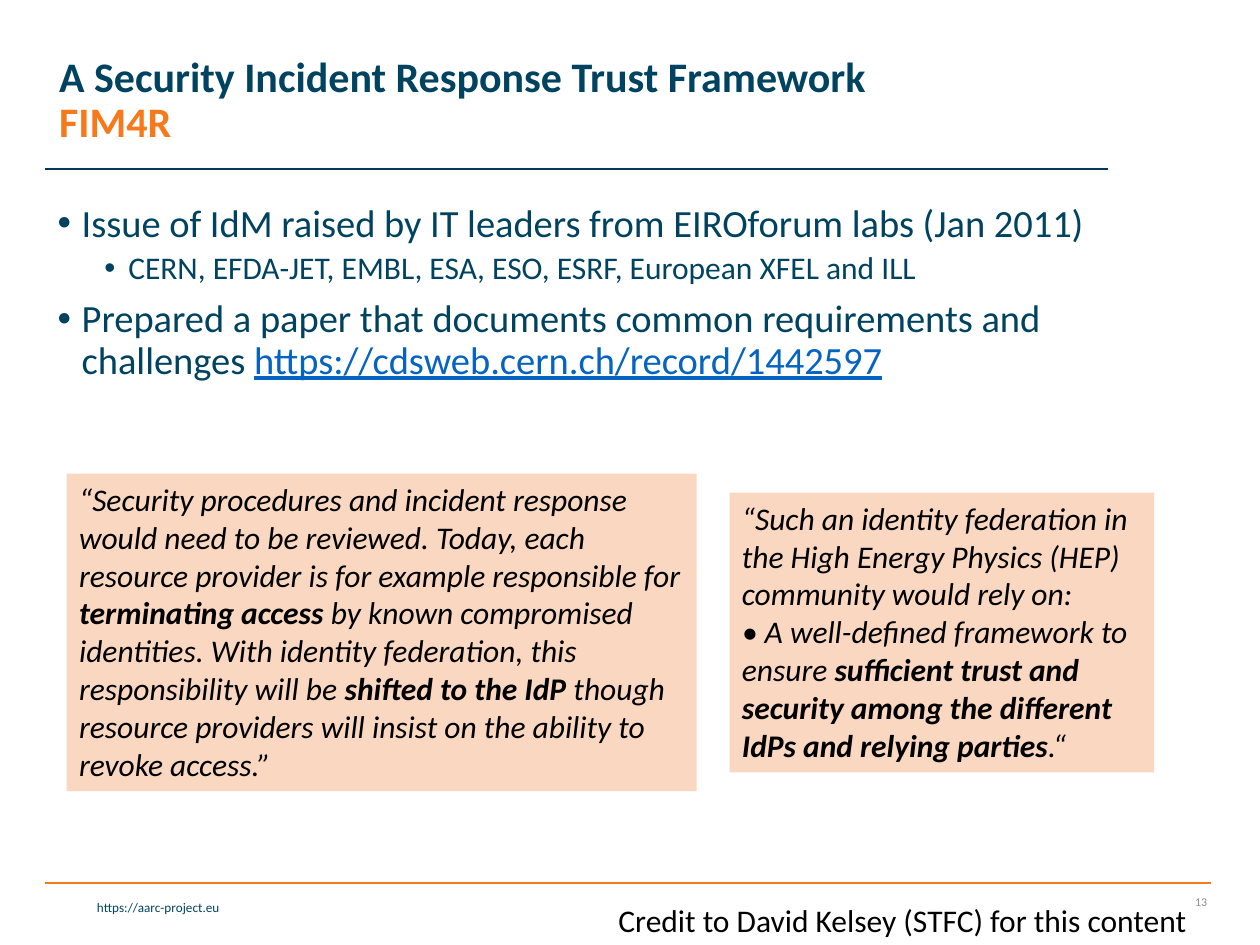
import pptx
import pptx.util
import pptx.dml.color
import pptx.enum.shapes
import pptx.enum.text
import lxml.etree
from pptx.oxml.ns import qn

Inches, Pt = pptx.util.Inches, pptx.util.Pt
RGB = pptx.dml.color.RGBColor
ALIGN = pptx.enum.text.PP_ALIGN
MIDDLE = pptx.enum.text.MSO_ANCHOR.MIDDLE

FONT = "Calibri"
TEAL = RGB(0x00, 0x43, 0x60)
NAVY = RGB(0x00, 0x39, 0x59)
ORANGE = RGB(0xF6, 0x79, 0x1C)
PEACH = RGB(0xED, 0x7D, 0x31)
BLUE = RGB(0x05, 0x63, 0xC1)
GREY = RGB(0x8C, 0x8C, 0x8C)
BLACK = RGB(0, 0, 0)

TITLE = ("A Security Incident Response Trust Framework ", "FIM4R")

# Level, then (text, is it an address) runs
POINTS = [
    (0, [("Issue of IdM raised by IT leaders from EIROforum labs (Jan 2011)", False)]),
    (1, [("CERN, EFDA-JET, EMBL, ESA, ESO, ESRF, European XFEL and ILL", False)]),
    (0, [("Prepared a paper that documents common requirements and challenges ", False),
         ("https://cdsweb.cern.ch/record/1442597", True)]),
]
# Size, space before and left indent of each level
LEVELS = [(22, 7.5, 0.19), (18, 3.8, 0.56)]
HANG = 0.19

# Box, then paragraphs of (text, bold) runs
QUOTES = [
    ((5.79, 3.91, 3.37, 2.22), [
        [("“Such an identity federation in the High Energy Physics (HEP) "
          "community would rely on:", False)],
        [("• A well-defined framework to ensure ", False),
         ("sufficient trust and security among the different IdPs "
          "and relying parties", True),
         (".“", False)],
    ]),
    ((0.53, 3.76, 5, 2.52), [
        [("“Security procedures and incident response would need to be reviewed. "
          "Today, each resource provider is for example responsible for ", False),
         ("terminating access", True),
         (" by known compromised identities. With identity federation, "
          "this responsibility will be ", False),
         ("shifted to the IdP", True),
         (" though resource providers will insist on the ability "
          "to revoke access.”", False)],
    ]),
]

# Text, box, size, colour, alignment, wrap, anchor
LABELS = [
    ("https://aarc-project.eu", (0.35, 7.09, 1.49, 0.23), 7.5, TEAL, ALIGN.RIGHT, True, None),
    ("13", (9.07, 7.01, 0.61, 0.3), 6.8, GREY, ALIGN.RIGHT, True, MIDDLE),
    ("Credit to David Kelsey (STFC) for this content", (4.81, 7.1, 4.79, 0.4),
     18, BLACK, ALIGN.LEFT, False, None),
]

# Left, right, height on the slide, colour
RULES = [(0.36, 9.61, 7.01, ORANGE), (0.36, 8.79, 1.34, NAVY)]


def style(para, size, color):
    para.font.name = FONT
    para.font.size = Pt(size)
    para.font.color.rgb = color


def add_rule(slide, left, right, top, color):
    line = slide.shapes.add_connector(
        pptx.enum.shapes.MSO_CONNECTOR.STRAIGHT, *map(Inches, (left, top, right, top)))
    line.line.color.rgb = color
    line.line.width = Pt(1)
    lxml.etree.SubElement(line._element.spPr, qn("a:effectLst"))


def add_label(slide, text, box, size, color, align, wrap, anchor):
    frame = slide.shapes.add_textbox(*map(Inches, box)).text_frame
    frame.word_wrap = wrap
    if anchor is not None:
        frame.vertical_anchor = anchor
    para = frame.paragraphs[0]
    para.text = text
    para.alignment = align
    style(para, size, color)


def set_title(slide):
    title = slide.shapes.title
    title.left, title.top, title.width, title.height = map(Inches, (0.37, 0.08, 7.88, 1.45))
    frame = title.text_frame
    frame.vertical_anchor = MIDDLE
    para = frame.paragraphs[0]
    para.alignment = ALIGN.LEFT
    para.line_spacing = 0.9
    style(para, 24, TEAL)
    para.font.bold = True
    para.add_run().text = TITLE[0]
    para.add_line_break()
    run = para.add_run()
    run.text = TITLE[1]
    run.font.color.rgb = ORANGE


def add_points(slide):
    frame = slide.shapes.add_textbox(*map(Inches, (0.36, 1.57, 8.95, 5.18))).text_frame
    frame.word_wrap = True
    for i, (level, runs) in enumerate(POINTS):
        size, space, indent = LEVELS[level]
        para = frame.add_paragraph() if i else frame.paragraphs[0]
        para.level = level
        para.line_spacing = 0.9
        if i:
            para.space_before = Pt(space)
        props = para._p.get_or_add_pPr()
        props.set("marL", str(Inches(indent)))
        props.set("indent", str(-Inches(HANG)))
        lxml.etree.SubElement(props, qn("a:buFont"), typeface="Arial")
        lxml.etree.SubElement(props, qn("a:buChar"), char="•")
        style(para, size, TEAL)
        for text, address in runs:
            run = para.add_run()
            run.text = text
            if address:
                run.font.color.rgb = BLUE
                run.font.underline = True


def add_quote(slide, box, paras):
    shape = slide.shapes.add_shape(
        pptx.enum.shapes.MSO_SHAPE.RECTANGLE, *map(Inches, box))
    shape.shadow.inherit = False
    shape.line.fill.background()
    shape.fill.solid()
    shape.fill.fore_color.rgb = PEACH
    tint = shape._element.spPr.find(".//" + qn("a:srgbClr"))
    lxml.etree.SubElement(tint, qn("a:alpha"), val="30000")
    frame = shape.text_frame
    frame.word_wrap = True
    frame.vertical_anchor = pptx.enum.text.MSO_ANCHOR.TOP
    for i, runs in enumerate(paras):
        para = frame.add_paragraph() if i else frame.paragraphs[0]
        para.alignment = ALIGN.LEFT
        style(para, 18, BLACK)
        para.font.italic = True
        for text, bold in runs:
            run = para.add_run()
            run.text = text
            if bold:
                run.font.bold = True


def main():
    deck = pptx.Presentation()
    deck.slide_width, deck.slide_height = Inches(10), Inches(7.5)
    slide = deck.slides.add_slide(deck.slide_layouts.get_by_name("Title Only"))
    set_title(slide)
    for rule in RULES:
        add_rule(slide, *rule)
    add_points(slide)
    for label in LABELS:
        add_label(slide, *label)
    for quote in QUOTES:
        add_quote(slide, *quote)
    deck.save("out.pptx")


if __name__ == "__main__":
    main()
